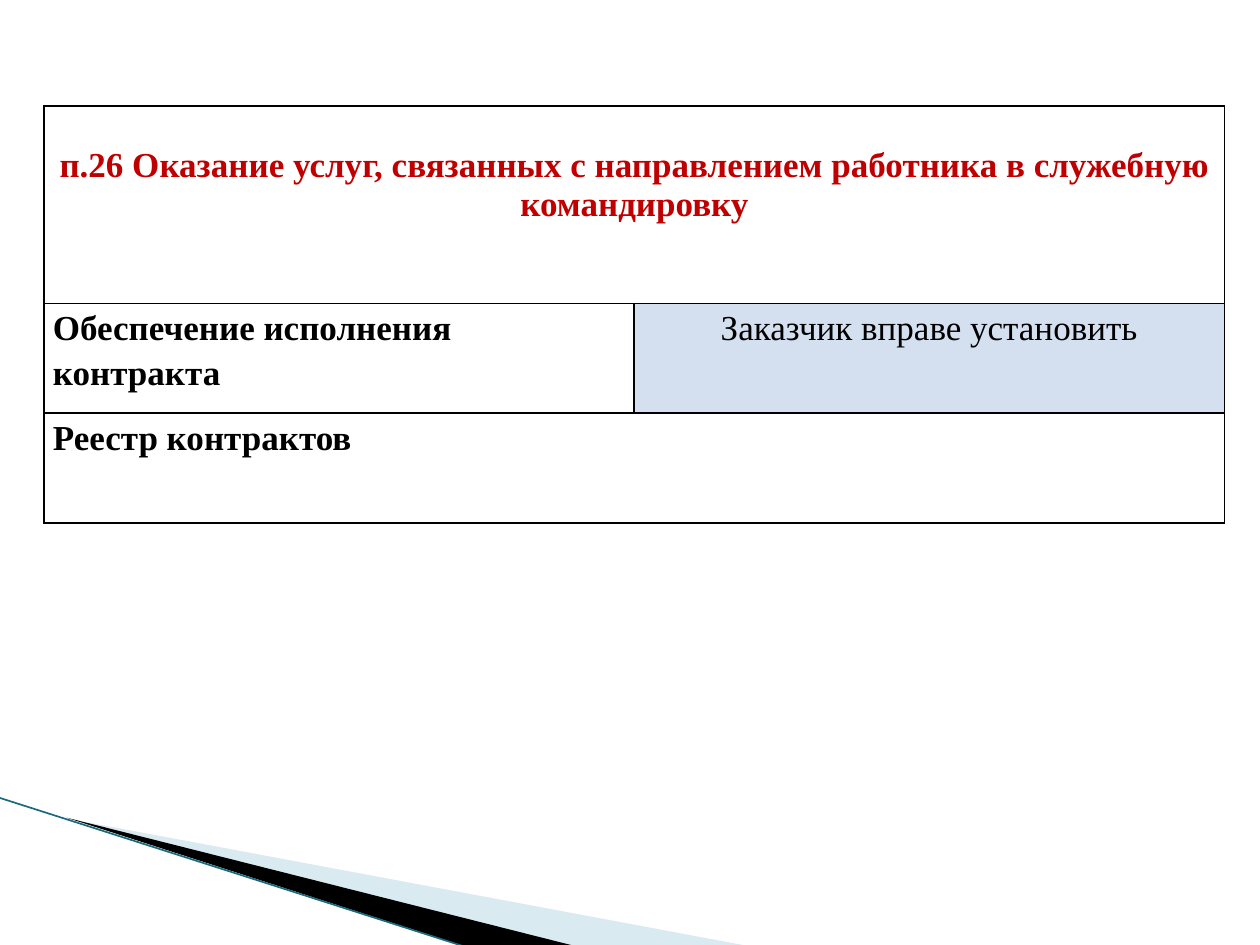
from dataclasses import dataclass

from lxml import etree
from pptx import Presentation
from pptx.dml.color import RGBColor
from pptx.enum.shapes import MSO_CONNECTOR
from pptx.enum.text import PP_ALIGN
from pptx.oxml.ns import qn
from pptx.util import Inches, Pt

STRAIGHT = MSO_CONNECTOR.STRAIGHT
LEFT, CENTER = PP_ALIGN.LEFT, PP_ALIGN.CENTER


@dataclass(frozen=True)
class Theme:
    font: str = "Times New Roman"
    text_size: int = 20
    border_width: int = 1
    edge_width: float = 0.95
    black: str = "000000"
    heading: str = "C00000"
    highlight: str = "D4DFEF"
    pale_blue: str = "A0CBDC"
    edge: str = "186A7C"


THEME = Theme()


def rgb(value):
    return RGBColor.from_string(value)


def add_wedge(slide, points, color, opacity=None):
    corners = [(Inches(x), Inches(y)) for x, y in points]
    builder = slide.shapes.build_freeform(*corners[0])
    builder.add_line_segments(corners[1:], close=True)
    wedge = builder.convert_to_shape()
    wedge.shadow.inherit = False
    wedge.line.fill.background()
    wedge.fill.solid()
    wedge.fill.fore_color.rgb = rgb(color)
    if opacity is not None:
        tint = wedge.fill._xPr.find(".//" + qn("a:srgbClr"))
        etree.SubElement(tint, qn("a:alpha"), val=str(opacity * 1000))


def add_edge(slide, start, end):
    edge = slide.shapes.add_connector(
        STRAIGHT, *(Inches(value) for value in (*start, *end)))
    edge.line.color.rgb = rgb(THEME.edge)
    edge.line.width = Pt(THEME.edge_width)
    etree.SubElement(edge._element.spPr, qn("a:effectLst"))


def add_borders(cell):
    properties = cell._tc.get_or_add_tcPr()
    for side in ("lnL", "lnR", "lnT", "lnB"):
        border = etree.SubElement(
            properties, qn(f"a:{side}"), w=str(Pt(THEME.border_width)))
        solid = etree.SubElement(border, qn("a:solidFill"))
        etree.SubElement(solid, qn("a:srgbClr"), val=THEME.black)


def write_cell(cell, text, color=THEME.black, bold=True, align=LEFT,
               spacing=1.15, top=0):
    cell.margin_left = cell.margin_right = Inches(0.07)
    cell.margin_top, cell.margin_bottom = Inches(top), 0
    paragraph = cell.text_frame.paragraphs[0]
    paragraph.text = text
    paragraph.alignment = align
    paragraph.line_spacing = spacing
    font = paragraph.runs[0].font
    font.name, font.size, font.bold = THEME.font, Pt(THEME.text_size), bold
    font.color.rgb = rgb(color)


def add_contract_table(slide):
    widths, heights = (4.68, 4.69), (1.57, 0.87, 0.87)
    table = slide.shapes.add_table(
        len(heights), len(widths), Inches(0.35), Inches(0.84),
        Inches(sum(widths)), Inches(sum(heights))).table
    table.first_row = table.horz_banding = False
    for column, width in zip(table.columns, widths):
        column.width = Inches(width)
    for row, height in zip(table.rows, heights):
        row.height = Inches(height)
    for cell in table.iter_cells():
        add_borders(cell)
        cell.fill.background()
    for row in (0, 2):
        table.cell(row, 0).merge(table.cell(row, 1))

    write_cell(table.cell(0, 0),
               "п.26 Оказание услуг, связанных с направлением работника "
               "в служебную командировку",
               color=THEME.heading, align=CENTER, spacing=1.0, top=0.32)
    write_cell(table.cell(1, 0), "Обеспечение исполнения контракта")
    permission = table.cell(1, 1)
    write_cell(permission, "Заказчик вправе установить",
               bold=False, align=CENTER)
    permission.fill.solid()
    permission.fill.fore_color.rgb = rgb(THEME.highlight)
    write_cell(table.cell(2, 0), "Реестр контрактов")


def main():
    presentation = Presentation()
    presentation.slide_width = Inches(10)
    presentation.slide_height = Inches(7.5)
    slide = presentation.slides.add_slide(presentation.slide_layouts[6])
    add_wedge(slide, [(0.55, 6.5), (5.95, 7.51), (4.56, 7.51)],
              THEME.pale_blue, opacity=40)
    add_wedge(slide, [(0.53, 6.49), (4.57, 7.51), (3.72, 7.52)], THEME.black)
    add_edge(slide, (-0.01, 6.33), (3.71, 7.52))
    add_contract_table(slide)
    presentation.save("out.pptx")


if __name__ == "__main__":
    main()
